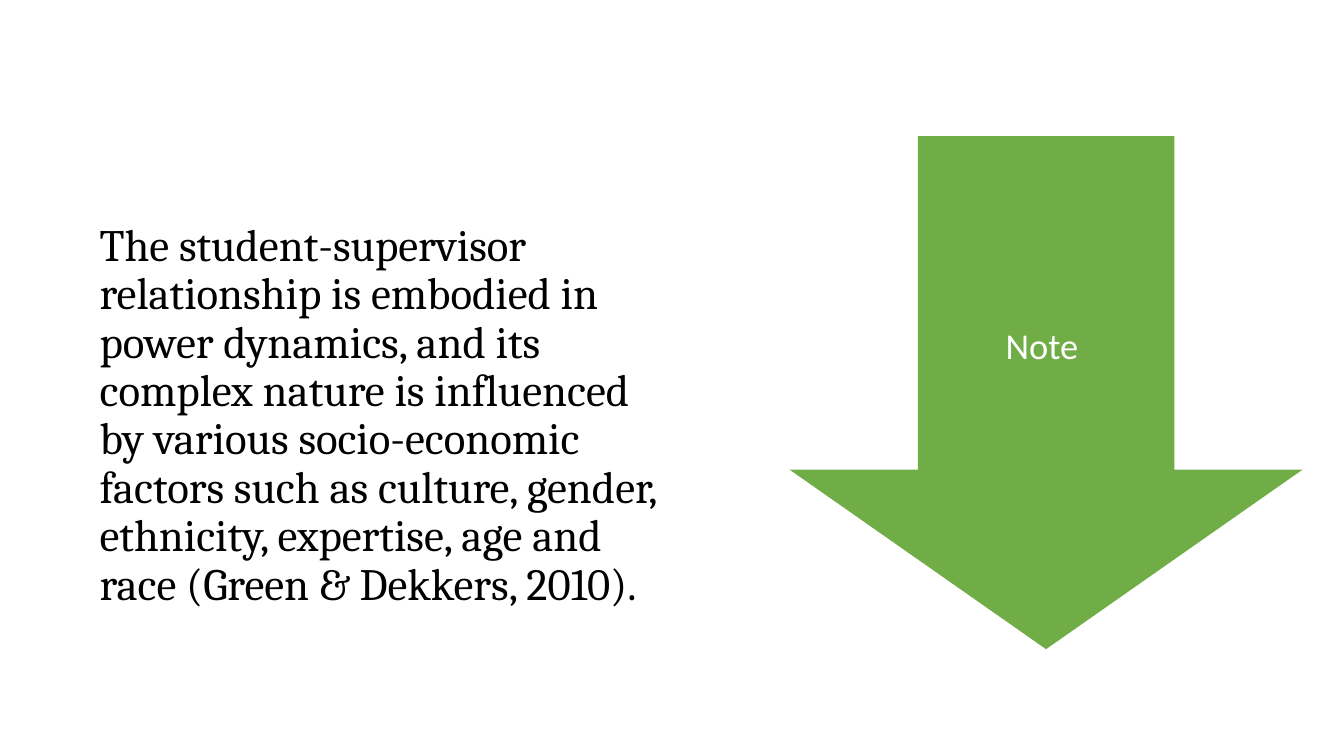
"""Build a slide on power dynamics in the student-supervisor relationship."""
from dataclasses import dataclass

from pptx import Presentation
from pptx import util as u
from pptx.dml.color import RGBColor
from pptx.enum import shapes, text

BLACK = RGBColor(0x00, 0x00, 0x00)
WHITE = RGBColor(0xFF, 0xFF, 0xFF)
GREEN = RGBColor(0x70, 0xAD, 0x47)


@dataclass(frozen=True)
class Box:
    """Position and size in inches."""

    left: float
    top: float
    width: float
    height: float

    def emu(self) -> tuple[int, ...]:
        """Return the four lengths for python-pptx."""
        return tuple(u.Inches(n) for n in (self.left, self.top, self.width, self.height))


STATEMENT = (
    "The student-supervisor relationship is embodied in power dynamics, "
    "and its complex nature is influenced by various socio-economic factors "
    "such as culture, gender, ethnicity, expertise, age and race "
    "(Green & Dekkers, 2010)."
)
STATEMENT_BOX = Box(0.89, 0.52, 5.78, 6.18)
ARROW_BOX = Box(7.83, 1.35, 5.09, 5.09)
NOTE_BOX = Box(9.1, 1.35, 2.55, 4.2)


def add_text(slide, box: Box, wording: str, *, font: str, size: float,
             color: RGBColor, align, anchor,
             insets: tuple[float, float, float, float]) -> None:
    """Add a wrapped text box with one formatted paragraph."""
    frame = slide.shapes.add_textbox(*box.emu()).text_frame
    frame.word_wrap = True
    frame.vertical_anchor = anchor
    (frame.margin_left, frame.margin_top,
     frame.margin_right, frame.margin_bottom) = map(u.Inches, insets)
    paragraph = frame.paragraphs[0]
    paragraph.alignment = align
    paragraph.line_spacing = 0.9
    run = paragraph.add_run()
    run.text = wording
    run.font.name = font
    run.font.size = u.Pt(size)
    run.font.color.rgb = color


def add_down_arrow(slide, box: Box, fill: RGBColor) -> None:
    """Add a plain filled arrow pointing down."""
    arrow = slide.shapes.add_shape(shapes.MSO_SHAPE.DOWN_ARROW, *box.emu())
    arrow.adjustments[0] = 0.5
    arrow.adjustments[1] = 0.35
    arrow.shadow.inherit = False
    arrow.fill.solid()
    arrow.fill.fore_color.rgb = fill
    arrow.line.fill.background()


def main() -> None:
    """Create and save the presentation."""
    deck = Presentation()
    deck.slide_width, deck.slide_height = u.Inches(13.33), u.Inches(7.5)
    slide = deck.slides.add_slide(deck.slide_layouts[6])
    add_text(slide, STATEMENT_BOX, STATEMENT, font="Cambria", size=32, color=BLACK,
             align=text.PP_ALIGN.LEFT, anchor=text.MSO_ANCHOR.BOTTOM,
             insets=(0.1, 0.05, 0.1, 0.65))
    add_down_arrow(slide, ARROW_BOX, GREEN)
    add_text(slide, NOTE_BOX, "Note ", font="Calibri", size=26, color=WHITE,
             align=text.PP_ALIGN.CENTER, anchor=text.MSO_ANCHOR.MIDDLE,
             insets=(0.2, 0.2, 0.2, 0.2))
    deck.save("out.pptx")


if __name__ == "__main__":
    main()
